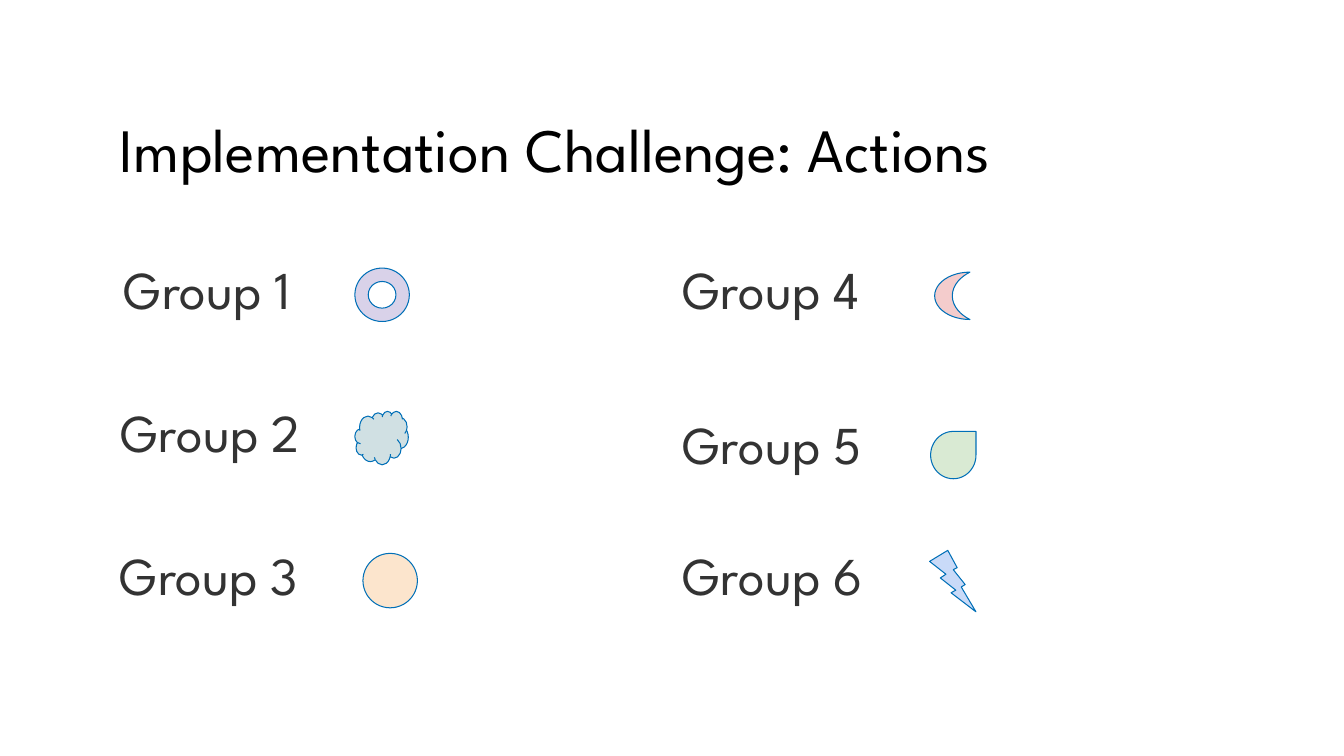
from pptx import Presentation
from pptx import util as u
from pptx.dml.color import RGBColor
from pptx.enum import shapes, text

PX = u.Inches(1) // 100
FONT = "League Spartan"
BLACK = RGBColor(0x00, 0x00, 0x00)
GREY = RGBColor(0x33, 0x33, 0x33)
BLUE = RGBColor(0x00, 0x6F, 0xB7)
LILAC = RGBColor(0xD9, 0xD2, 0xE9)
MIST = RGBColor(0xD0, 0xE0, 0xE3)
PEACH = RGBColor(0xFC, 0xE5, 0xCD)
PINK = RGBColor(0xF4, 0xCC, 0xCC)
GREEN = RGBColor(0xD9, 0xEA, 0xD3)
SKY = RGBColor(0xC9, 0xDA, 0xF8)

KIND = shapes.MSO_SHAPE
LABEL_SIZE = (212, 88)
GROUPS = [
    ("Group 1", (113, 249), KIND.DONUT, (239, 17, 54, 53), LILAC),
    ("Group 2", (110, 391), KIND.CLOUD, (242, 17, 53, 53), MIST),
    ("Group 3", (109, 533), KIND.OVAL, (251, 16, 54, 54), PEACH),
    ("Group 4", (667, 249), KIND.MOON, (260, 21, 35, 47), PINK),
    ("Group 5", (667, 403), KIND.TEAR, (256, 25, 45, 47), GREEN),
    ("Group 6", (667, 533), KIND.LIGHTNING_BOLT, (255, 13, 46, 61), SKY),
]


def emu(box):
    return [v * PX for v in box]


def add_text(s, box, words, size, color, spacing=None, before=0):
    tf = s.shapes.add_textbox(*emu(box)).text_frame
    tf.word_wrap = True
    tf.vertical_anchor = text.MSO_ANCHOR.TOP
    p = tf.paragraphs[0]
    p.line_spacing = spacing
    p.space_before = u.Pt(before)
    r = p.add_run()
    r.text = words
    r.font.name = FONT
    r.font.size = u.Pt(size)
    r.font.color.rgb = color


def add_icon(s, kind, box, fill):
    sp = s.shapes.add_shape(kind, *emu(box))
    sp.shadow.inherit = False
    sp.fill.solid()
    sp.fill.fore_color.rgb = fill
    sp.line.color.rgb = BLUE
    sp.line.width = u.Pt(0.75)


def add_title(s, box):
    add_text(s, box, "Implementation Challenge: Actions", 44, BLACK, spacing=0.9)


def add_group(s, box, name, kind, icon, fill):
    x, y = box[:2]
    dx, dy, w, h = icon
    add_text(s, box, name, 38, GREY, before=3.6)
    add_icon(s, kind, (x + dx, y + dy, w, h), fill)


def main():
    prs = Presentation()
    prs.slide_width, prs.slide_height = emu((1333, 750))
    s = prs.slides.add_slide(prs.slide_layouts[6])
    add_title(s, (109, 113, 1137, 53))
    for name, corner, kind, icon, fill in GROUPS:
        add_group(s, corner + LABEL_SIZE, name, kind, icon, fill)
    prs.save("out.pptx")


if __name__ == "__main__":
    main()
